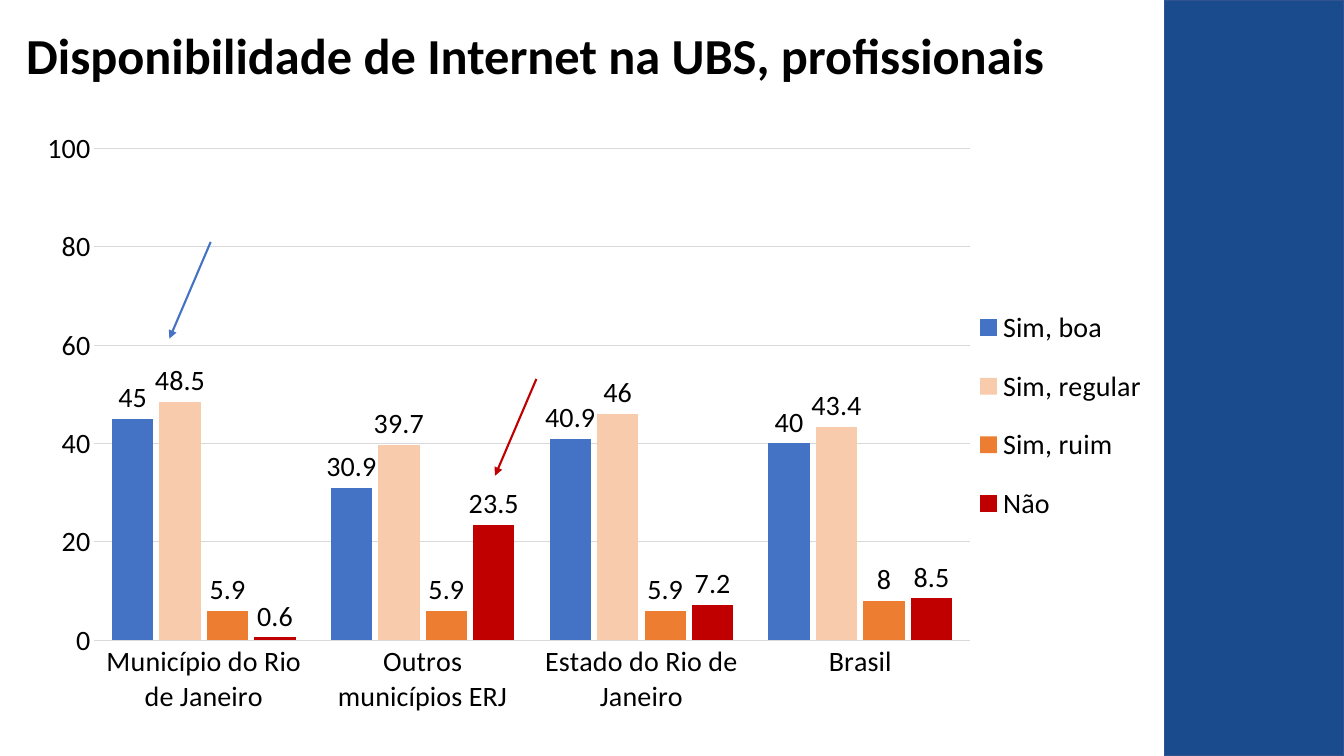
"""Build a slide with a clustered column chart of internet availability."""
from lxml import etree
from pptx import Presentation
from pptx.chart.data import CategoryChartData
from pptx.dml.color import RGBColor
from pptx.enum.chart import XL_CHART_TYPE, XL_LABEL_POSITION, XL_LEGEND_POSITION, XL_TICK_MARK
from pptx.enum.shapes import MSO_CONNECTOR, MSO_SHAPE
from pptx.enum.text import MSO_ANCHOR, PP_ALIGN
from pptx.oxml.ns import qn
from pptx.util import Inches, Pt

COLUMNS = XL_CHART_TYPE.COLUMN_CLUSTERED
OUTSIDE_END = XL_LABEL_POSITION.OUTSIDE_END
LEGEND_RIGHT = XL_LEGEND_POSITION.RIGHT
NO_TICKS = XL_TICK_MARK.NONE
STRAIGHT = MSO_CONNECTOR.STRAIGHT
RECTANGLE = MSO_SHAPE.RECTANGLE
MIDDLE = MSO_ANCHOR.MIDDLE
LEFT = PP_ALIGN.LEFT

BLACK = RGBColor(0x00, 0x00, 0x00)
NAVY = RGBColor(0x1A, 0x4B, 0x8D)
NAVY_EDGE = RGBColor(0x31, 0x53, 0x8F)
GRAY = RGBColor(0xD9, 0xD9, 0xD9)
BLUE = RGBColor(0x44, 0x72, 0xC4)
PEACH = RGBColor(0xF8, 0xCB, 0xAD)
ORANGE = RGBColor(0xED, 0x7D, 0x31)
RED = RGBColor(0xC0, 0x00, 0x00)

FONT = "Calibri"
CATEGORIES = ["Município do Rio de Janeiro", "Outros municípios ERJ",
              "Estado do Rio de Janeiro", "Brasil"]
ANSWERS = [
    ("Sim, boa", [45, 30.9, 40.9, 40], BLUE),
    ("Sim, regular", [48.5, 39.7, 46, 43.4], PEACH),
    ("Sim, ruim", [5.9, 5.9, 5.9, 8], ORANGE),
    ("Não", [0.6, 23.5, 7.2, 8.5], RED),
]


def set_font(font, size):
    """Apply the slide's typeface in black at the given size."""
    font.name = FONT
    font.size = Pt(size)
    font.color.rgb = BLACK


def set_line(line, color, width):
    """Give a line its colour and its width in points."""
    line.color.rgb = color
    line.width = Pt(width)


def add_side_panel(page):
    """Draw the blue band on the right edge."""
    panel = page.shapes.add_shape(
        RECTANGLE, Inches(11.55), Inches(0), Inches(1.78), Inches(7.5))
    panel.shadow.inherit = False
    panel.fill.solid()
    panel.fill.fore_color.rgb = NAVY
    set_line(panel.line, NAVY_EDGE, 1)


def set_title(page, text):
    """Place and format the title placeholder."""
    title = page.shapes.title
    title.left, title.top = Inches(0.16), Inches(-0.15)
    title.width, title.height = Inches(11.12), Inches(1.45)
    frame = title.text_frame
    frame.text = text
    frame.vertical_anchor = MIDDLE
    para = frame.paragraphs[0]
    para.alignment = LEFT
    para.line_spacing = 0.9
    set_font(para.font, 36)
    para.font.bold = True


def set_layout(parent, index, box, inner=False):
    """Fix the place of a chart part as fractions of the chart."""
    for old in parent.findall(qn("c:layout")):
        parent.remove(old)
    layout = etree.Element(qn("c:layout"))
    manual = etree.SubElement(layout, qn("c:manualLayout"))
    settings = [("layoutTarget", "inner")] if inner else []
    settings += [("xMode", "edge"), ("yMode", "edge")]
    settings += zip("xywh", box)
    for name, value in settings:
        etree.SubElement(manual, qn(f"c:{name}")).set("val", str(value))
    parent.insert(index, layout)


def format_axes(chart):
    """Format both axes and the horizontal gridlines."""
    for axis in (chart.category_axis, chart.value_axis):
        axis.major_tick_mark = axis.minor_tick_mark = NO_TICKS
        set_font(axis.tick_labels.font, 20)
    set_line(chart.category_axis.format.line, GRAY, 0.75)
    values = chart.value_axis
    values.minimum_scale, values.maximum_scale, values.major_unit = 0, 100, 20
    values.format.line.fill.background()
    values.has_major_gridlines = True
    set_line(values.major_gridlines.format.line, GRAY, 0.75)


def format_series(series, color):
    """Colour one series and show its values above the columns."""
    series.format.fill.solid()
    series.format.fill.fore_color.rgb = color
    series.invert_if_negative = False
    labels = series.data_labels
    labels.show_value = True
    labels.position = OUTSIDE_END
    set_font(labels.font, 20)


def add_availability_chart(page):
    """Add the column chart with its legend."""
    data = CategoryChartData()
    data.categories = CATEGORIES
    for name, values, _ in ANSWERS:
        data.add_series(name, values)
    chart = page.shapes.add_chart(
        COLUMNS, Inches(0.16), Inches(1.19), Inches(11.26), Inches(6.11), data).chart
    set_font(chart.font, 10)
    chart.has_title = False
    format_axes(chart)
    plot = chart.plots[0]
    plot.gap_width, plot.overlap = 85, -15
    plot.vary_by_categories = False
    for series, (_, _, color) in zip(plot.series, ANSWERS):
        format_series(series, color)
    chart.has_legend = True
    legend = chart.legend
    legend.position = LEGEND_RIGHT
    legend.include_in_layout = False
    set_font(legend.font, 20)
    plot_area = chart.element.find(".//" + qn("c:plotArea"))
    set_layout(plot_area, 0, (0.069, 0.046, 0.771, 0.799), inner=True)
    set_layout(chart.element.find(".//" + qn("c:legend")), 1, (0.84, 0.27, 0.16, 0.42))


def add_arrow(page, left, top, color):
    """Draw an arrow that slants down to the left onto a column."""
    arrow = page.shapes.add_connector(
        STRAIGHT, Inches(left + 0.41), Inches(top), Inches(left), Inches(top + 0.96))
    set_line(arrow.line, color, 1.5)
    properties = arrow.element.spPr
    outline = properties.find(qn("a:ln"))
    etree.SubElement(outline, qn("a:tailEnd")).set("type", "triangle")
    etree.SubElement(properties, qn("a:effectLst"))


def main():
    """Build and save the deck."""
    deck = Presentation()
    deck.slide_width, deck.slide_height = Inches(13.33), Inches(7.5)
    page = deck.slides.add_slide(deck.slide_layouts[5])
    add_side_panel(page)
    set_title(page, "Disponibilidade de Internet na UBS, profissionais")
    add_availability_chart(page)
    add_arrow(page, 4.91, 3.76, RED)
    add_arrow(page, 1.68, 2.4, BLUE)
    deck.save("out.pptx")


if __name__ == "__main__":
    main()
